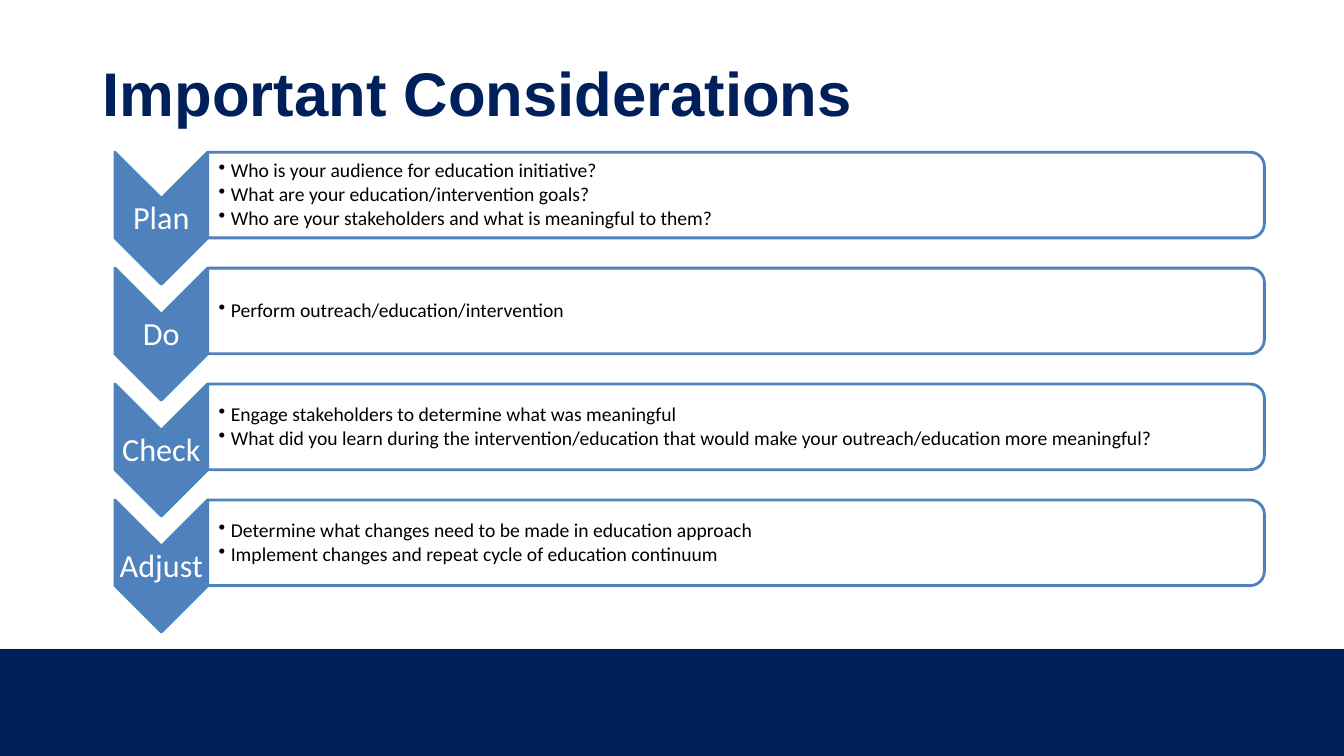
import pptx
import pptx.util
import pptx.dml.color
import pptx.enum.shapes
import pptx.enum.text
import lxml.etree
from dataclasses import dataclass

Inches, Pt = pptx.util.Inches, pptx.util.Pt
SHAPE = pptx.enum.shapes.MSO_SHAPE
ALIGN = pptx.enum.text.PP_ALIGN
MIDDLE = pptx.enum.text.MSO_ANCHOR.MIDDLE


@dataclass(frozen=True)
class Theme:
    navy: str = "00205B"
    blue: str = "4F81BD"
    pale: str = "F8F8F8"
    white: str = "FFFFFF"
    black: str = "000000"
    title_font: str = "Arial"
    body_font: str = "Calibri"
    title_size: int = 44
    step_size: int = 23
    bullet_size: int = 14


theme = Theme()
steps = [
    ("Plan", ["Who is your audience for education initiative?",
              "What are your education/intervention goals?",
              "Who are your stakeholders and what is meaningful to them?"]),
    ("Do", ["Perform outreach/education/intervention"]),
    ("Check", ["Engage stakeholders to determine what was meaningful",
               "What did you learn during the intervention/education that would "
               "make your outreach/education more meaningful?"]),
    ("Adjust", ["Determine what changes need to be made in education approach",
                "Implement changes and repeat cycle of education continuum"]),
]


def add_block(kind, left, top, width, height, fill, line=None, turned=False):
    """Add a filled shape; a turned one covers the given area after a quarter turn."""
    if turned:
        left, top = left + (width - height) / 2, top + (height - width) / 2
        width, height = height, width
    shape = slide.shapes.add_shape(
        kind, Inches(left), Inches(top), Inches(width), Inches(height))
    shape.rotation = 90 if turned else 0
    shape.shadow.inherit = False
    shape.fill.solid()
    shape.fill.fore_color.rgb = pptx.dml.color.RGBColor.from_string(fill)
    if line:
        shape.line.color.rgb = pptx.dml.color.RGBColor.from_string(line)
        shape.line.width = Pt(2)
    else:
        shape.line.fill.background()
    return shape


def write_lines(shape, lines, margins, font, size, color, align, gap=0, bullet=False):
    """Fill a text frame with one paragraph per line."""
    frame = shape.text_frame
    frame.word_wrap = True
    frame.vertical_anchor = MIDDLE
    (frame.margin_left, frame.margin_top,
     frame.margin_right, frame.margin_bottom) = map(Inches, margins)
    frame.text = "\n".join(lines)
    for paragraph in frame.paragraphs:
        paragraph.alignment = align
        paragraph.line_spacing = 0.9
        paragraph.space_after = Pt(gap)
        if bullet:
            properties = paragraph._p.get_or_add_pPr()
            properties.set("marL", str(Inches(0.12)))
            properties.set("indent", str(-Inches(0.12)))
            namespace = properties.nsmap["a"]
            lxml.etree.SubElement(properties, f"{{{namespace}}}buChar", char="•")
        paragraph.font.name = font
        paragraph.font.size = Pt(size)
        paragraph.font.color.rgb = pptx.dml.color.RGBColor.from_string(color)


presentation = pptx.Presentation()
slide_width, slide_height = 13.33, 7.5
presentation.slide_width = Inches(slide_width)
presentation.slide_height = Inches(slide_height)
slide = presentation.slides.add_slide(presentation.slide_layouts[5])

# Footer band with its pale upper edge
for band_top, band_color in [(6.43, theme.pale), (6.44, theme.navy)]:
    add_block(SHAPE.RECTANGLE, 0, band_top, slide_width,
              slide_height - band_top, band_color)

# Title
title = slide.shapes.title
title.left, title.top, title.width, title.height = map(Inches, (0.92, 0.23, 11.5, 1.45))
write_lines(title, ["Important Considerations"], (0.1, 0.05, 0.1, 0.05),
            theme.title_font, theme.title_size, theme.navy, ALIGN.LEFT)
title.text_frame.paragraphs[0].font.bold = True

# Rows: a downward chevron and a panel of bullets for each step
first_top, row_pitch = 1.51, 1.15
chevron_left, chevron_width, chevron_height = 1.14, 0.92, 1.31
panel_left, panel_width, panel_height = 2.06, 10.48, 0.85
for row, (step, points) in enumerate(steps):
    top = first_top + row * row_pitch
    add_block(SHAPE.CHEVRON, chevron_left, top, chevron_width, chevron_height,
              theme.blue, theme.blue, turned=True)
    label = slide.shapes.add_textbox(
        Inches(chevron_left), Inches(top + 0.47), Inches(chevron_width), Inches(0.39))
    write_lines(label, [step], (0.02,) * 4, theme.body_font, theme.step_size,
                theme.white, ALIGN.CENTER)

    panel = add_block(SHAPE.ROUND_2_SAME_RECTANGLE, panel_left, top, panel_width,
                      panel_height, theme.white, theme.blue, turned=True)
    fill_color = panel.fill._xPr.solidFill[0]
    lxml.etree.SubElement(fill_color, f"{{{fill_color.nsmap['a']}}}alpha", val="90000")
    bullets = slide.shapes.add_textbox(
        Inches(panel_left), Inches(top + 0.04), Inches(panel_width - 0.04),
        Inches(panel_height - 0.08))
    write_lines(bullets, points, (0.11, 0.01, 0.01, 0.01), theme.body_font,
                theme.bullet_size, theme.black, ALIGN.LEFT, gap=2.1, bullet=True)

presentation.save("out.pptx")
